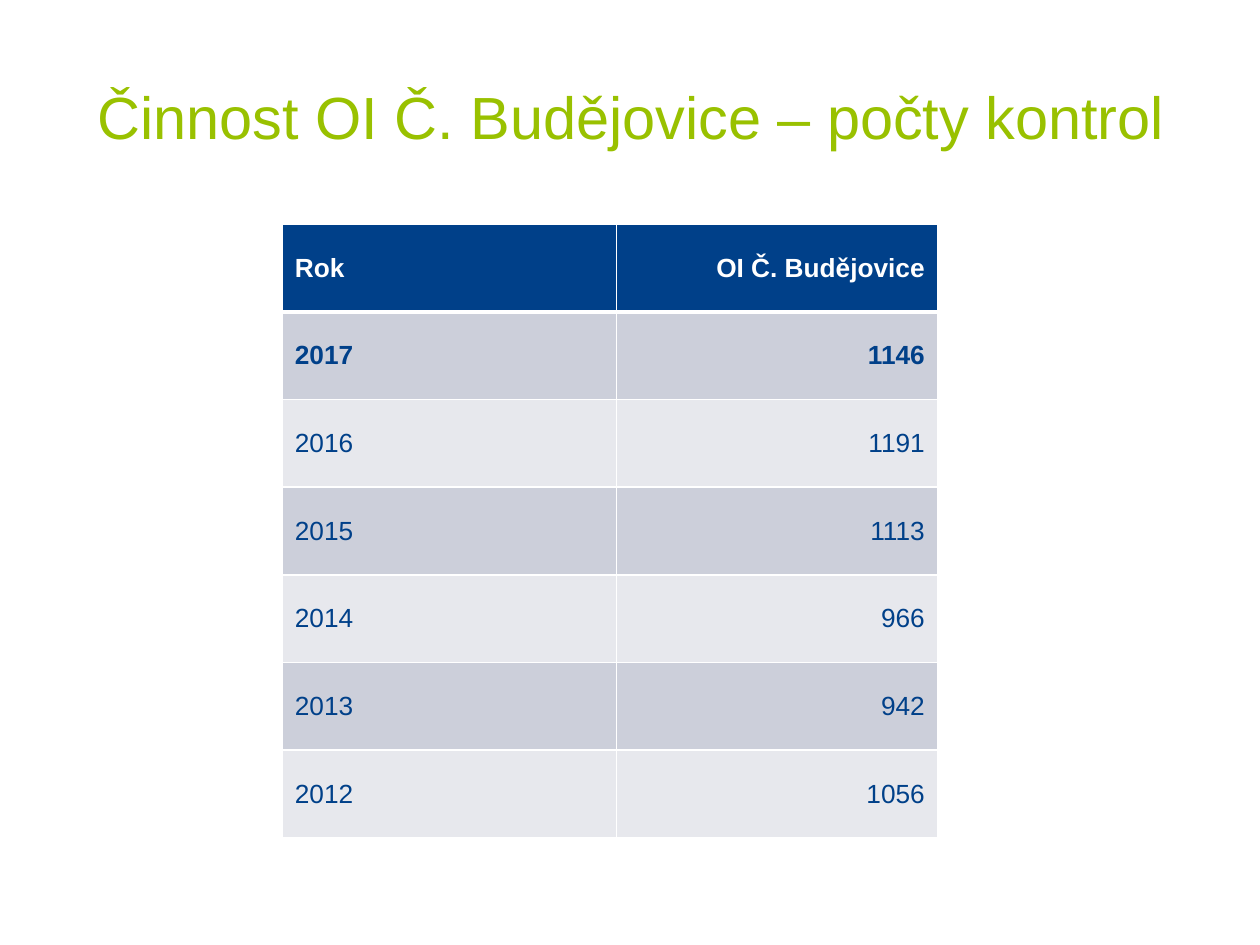
from dataclasses import dataclass

from lxml.etree import SubElement
from pptx import Presentation
from pptx.dml.color import RGBColor
from pptx.enum.text import MSO_ANCHOR, MSO_AUTO_SIZE, PP_ALIGN
from pptx.oxml.ns import qn
from pptx.util import Inches, Pt


@dataclass(frozen=True)
class Theme:
    """Colours, font and type sizes of the slide."""
    font: str = "Arial"
    title_size: int = 34
    table_size: int = 15
    green: str = "99C100"
    blue: str = "004089"
    white: str = "FFFFFF"
    bands: tuple = ("CCCFDA", "E7E8ED")
    border: float = 1
    header_border: float = 3


THEME = Theme()
TITLE = "Činnost OI Č. Budějovice – počty kontrol"
HEADER = ("Rok", "OI Č. Budějovice")
INSPECTIONS = (
    (2017, 1146),
    (2016, 1191),
    (2015, 1113),
    (2014, 966),
    (2013, 942),
    (2012, 1056),
)


def write_text(text_frame, text, *, size, color, bold=False, align=PP_ALIGN.LEFT):
    """Write one formatted paragraph into a text frame."""
    paragraph = text_frame.paragraphs[0]
    paragraph.alignment = align
    run = paragraph.add_run()
    run.text = text
    run.font.name = THEME.font
    run.font.size = Pt(size)
    run.font.bold = bold
    run.font.color.rgb = RGBColor.from_string(color)


def set_borders(cell, **widths):
    """Draw white cell borders with the given widths in points."""
    properties = cell._tc.get_or_add_tcPr()
    for side in ("L", "R", "T", "B"):
        width = Pt(widths.get(side, THEME.border))
        line = SubElement(properties, qn(f"a:ln{side}"), w=str(width))
        fill = SubElement(line, qn("a:solidFill"))
        SubElement(fill, qn("a:srgbClr"), val=THEME.white)


def add_title(slide, text, left, top, width, height):
    """Place and format the title placeholder."""
    title = slide.shapes.title
    title.left, title.top, title.width, title.height = left, top, width, height
    text_frame = title.text_frame
    text_frame.word_wrap = True
    text_frame.auto_size = MSO_AUTO_SIZE.NONE
    text_frame.vertical_anchor = MSO_ANCHOR.MIDDLE
    write_text(text_frame, text, size=THEME.title_size, color=THEME.green,
               align=PP_ALIGN.CENTER)


def add_inspection_table(slide, left, top, width, height):
    """Add the banded table of inspections by year, with the latest year bold."""
    rows = (HEADER, *INSPECTIONS)
    table = slide.shapes.add_table(
        len(rows), len(HEADER), left, top, width, height).table
    table.columns[0].width = int(width * 0.51)
    table.columns[1].width = width - table.columns[0].width
    for row_index, values in enumerate(rows):
        is_header = row_index == 0
        background = THEME.blue if is_header else THEME.bands[(row_index - 1) % 2]
        widths = {0: {"B": THEME.header_border},
                  1: {"T": THEME.header_border}}.get(row_index, {})
        for column_index, value in enumerate(values):
            cell = table.cell(row_index, column_index)
            cell.vertical_anchor = MSO_ANCHOR.MIDDLE
            set_borders(cell, **widths)
            cell.fill.solid()
            cell.fill.fore_color.rgb = RGBColor.from_string(background)
            write_text(cell.text_frame, str(value), size=THEME.table_size,
                       color=THEME.white if is_header else THEME.blue,
                       bold=row_index < 2,
                       align=PP_ALIGN.RIGHT if column_index else PP_ALIGN.LEFT)


def main():
    """Build and save the presentation."""
    presentation = Presentation()
    presentation.slide_width = Inches(10)
    presentation.slide_height = Inches(7.5)
    slide = presentation.slides.add_slide(presentation.slide_layouts[5])
    add_title(slide, TITLE, Inches(0.51), Inches(0.29), Inches(9), Inches(1.25))
    add_inspection_table(slide, Inches(2.24), Inches(1.78), Inches(5.2), Inches(4.87))
    presentation.save("out.pptx")


if __name__ == "__main__":
    main()
